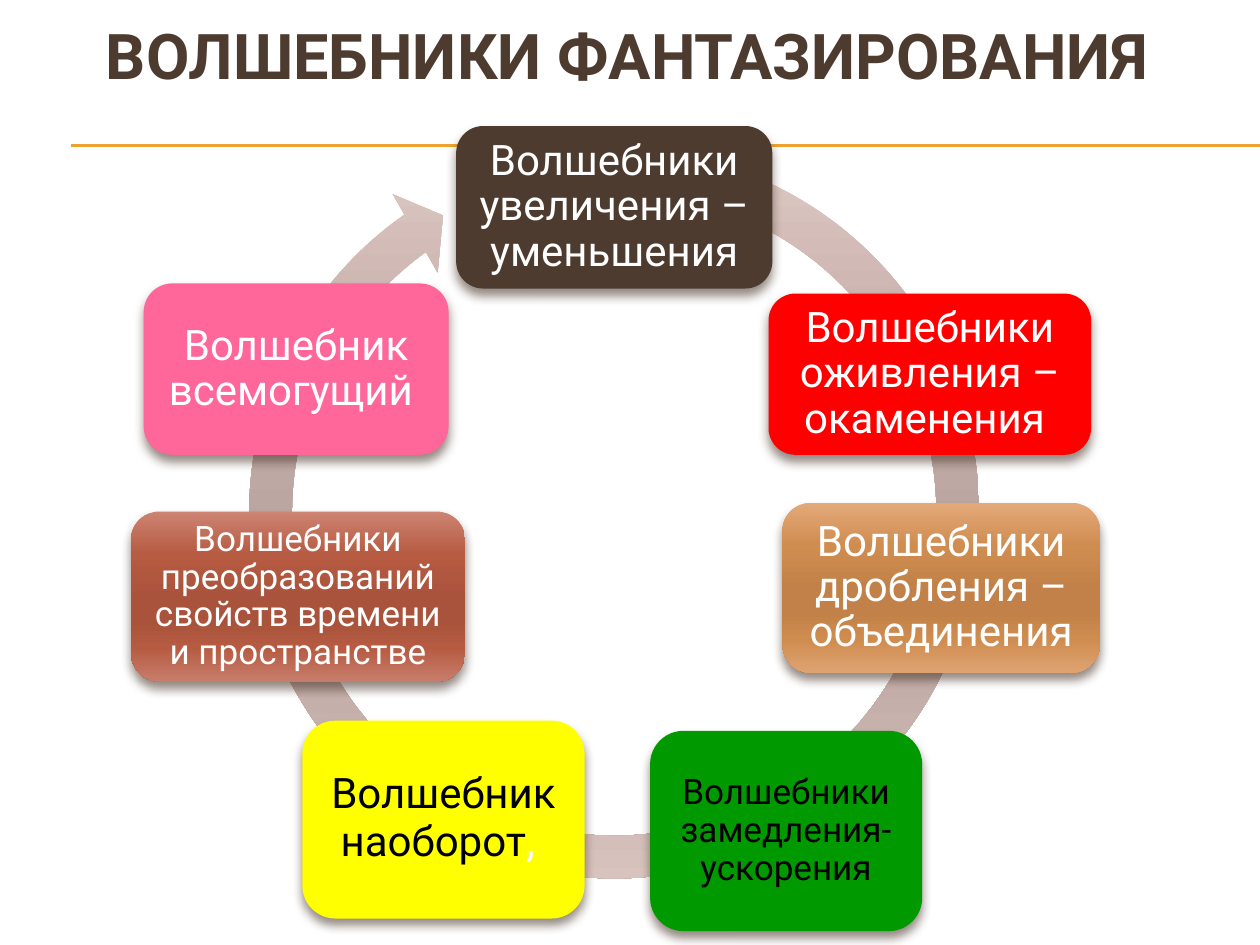
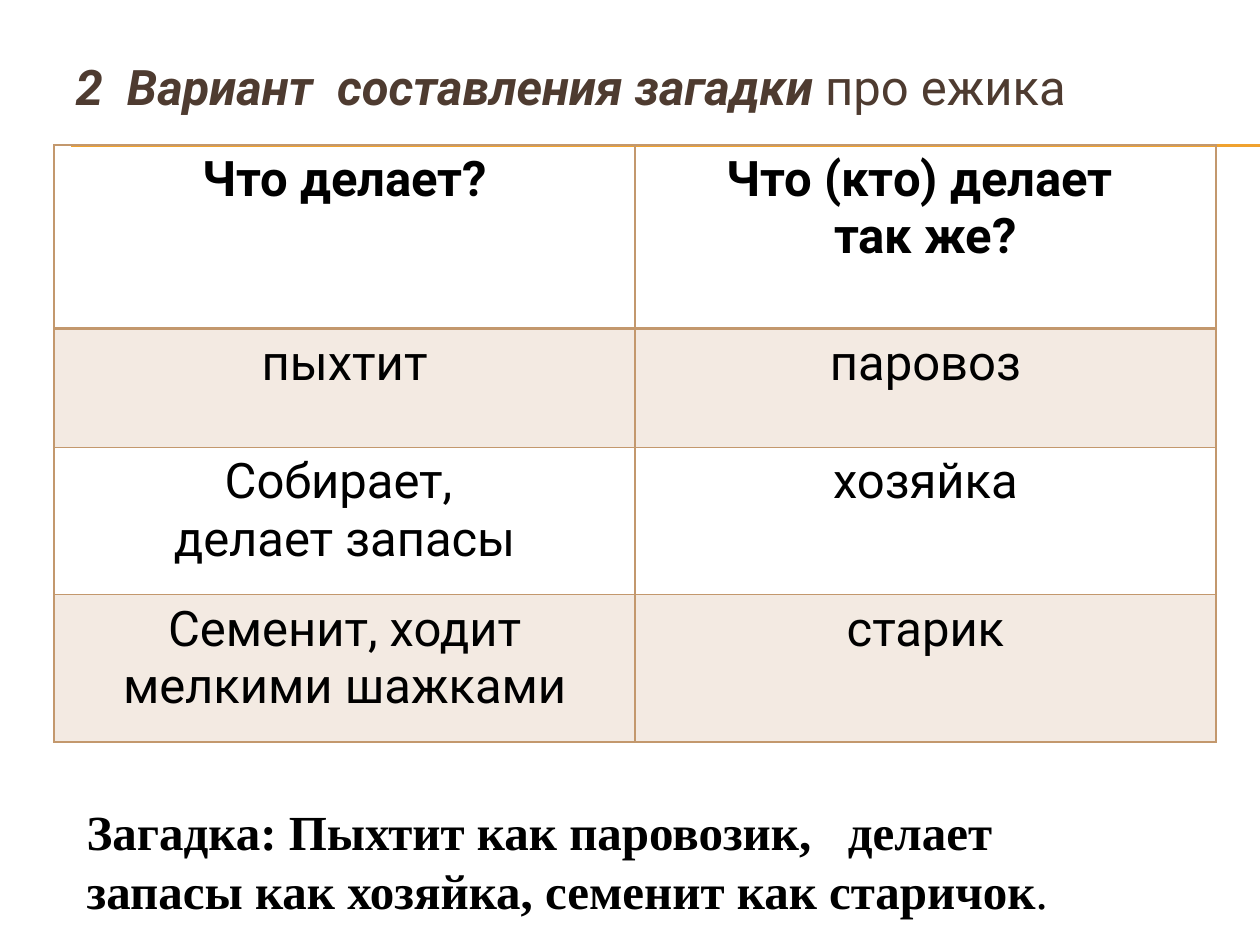
"""Build two slides on fantasy wizards and riddle making."""
from dataclasses import dataclass
from typing import Optional, Sequence, Union

from lxml.etree import SubElement
from pptx import Presentation
from pptx.dml.color import RGBColor
from pptx.enum.shapes import MSO_CONNECTOR as Connector, MSO_SHAPE as Preset
from pptx.enum.text import MSO_ANCHOR as Anchor, MSO_AUTO_SIZE as AutoSize, PP_ALIGN as Align
from pptx.oxml.ns import qn
from pptx.util import Inches, Pt

Fill = Union[str, Sequence[str]]


@dataclass(frozen=True)
class Theme:
    font: str = "Roboto"
    riddle_font: str = "Times New Roman"
    title_size: int = 36
    large: int = 28
    comma: int = 26
    medium: int = 24
    small: int = 20
    brown: str = "4E3B30"
    black: str = "000000"
    white: str = "FFFFFF"
    rule: str = "F0A22E"
    grid: str = "C3986D"
    band: str = "F3EAE2"
    red: str = "FF0000"
    green: str = "009900"
    yellow: str = "FFFF00"
    pink: str = "FF6699"
    ring: Sequence[str] = ("E0CBC7", "CBB4AF", "BBA6A1", "BBA6A1", "C9B3AE", "DAC5C1")
    caramel: Sequence[str] = ("E4A97A", "D08D50", "C18148", "C18148", "CF8C4F", "DEA372")
    brick: Sequence[str] = ("CD8473", "B75B42", "AA533C", "AA533C", "B65B42", "C77D6B")
    gradient_stops: Sequence[int] = (0, 25, 50, 65, 80, 100)


THEME = Theme()


@dataclass(frozen=True)
class Run:
    text: str
    size: Optional[int] = None
    color: Optional[str] = None
    bold: Optional[bool] = None
    italic: Optional[bool] = None


@dataclass(frozen=True)
class Box:
    left: float
    top: float
    width: float
    height: float

    def lengths(self) -> list:
        return [Inches(n) for n in (self.left, self.top, self.width, self.height)]


@dataclass(frozen=True)
class Wizard:
    box: Box
    fill: Fill
    runs: Sequence[Run]
    size: int = THEME.medium
    color: str = THEME.white
    inset: float = 0.1


WIZARDS = (
    Wizard(Box(3.62, 1, 2.51, 1.29), THEME.brown, [Run("Волшебники увеличения – уменьшения")]),
    Wizard(Box(6.1, 2.33, 2.56, 1.28), THEME.red, [Run("Волшебники оживления – окаменения ")]),
    Wizard(Box(6.21, 3.99, 2.52, 1.35), THEME.caramel, [Run("Волшебники дробления – объединения")]),
    Wizard(Box(5.16, 5.8, 2.16, 1.59), THEME.green, [Run("Волшебники замедления- ускорения")],
           THEME.small, THEME.black, 0.08),
    Wizard(Box(2.4, 5.72, 2.24, 1.57), THEME.yellow,
           [Run("Волшебник наоборот"), Run(", ", THEME.comma, THEME.white)], color=THEME.black),
    Wizard(Box(1.04, 4.06, 2.65, 1.35), THEME.brick,
           [Run("Волшебники преобразований свойств времени и пространстве")],
           THEME.small, inset=0.08),
    Wizard(Box(1.14, 2.25, 2.42, 1.36), THEME.pink, [Run("Волшебник всемогущий ")]),
)

RING_ADJUSTMENTS = (0.055, 3.307, 140.764, 172.057, 0.058)
RULE_HEIGHTS = (1.15, 1.16)
COMPARISONS = (
    (["Что делает?"], ["Что (кто) делает ", "так же?"]),
    (["пыхтит"], ["паровоз"]),
    (["Собирает, ", "делает запасы"], ["хозяйка"]),
    (["Семенит, ходит мелкими шажками"], ["старик"]),
)
ROW_HEIGHTS = (1.46, 0.94, 1.17, 1.17)


def write(frame, paragraphs: Sequence[Sequence[Run]], *, size: int, color: str,
          font: str = THEME.font, bold: bool = False, italic: bool = False,
          align=Align.LEFT, spacing: float = 1.0) -> None:
    """Fill a text frame with formatted paragraphs."""
    for index, pieces in enumerate(paragraphs):
        paragraph = frame.paragraphs[0] if index == 0 else frame.add_paragraph()
        paragraph.alignment = align
        paragraph.line_spacing = spacing
        for piece in pieces:
            run = paragraph.add_run()
            run.text = piece.text
            run.font.name = font
            run.font.size = Pt(piece.size or size)
            run.font.color.rgb = RGBColor.from_string(piece.color or color)
            run.font.bold = bold if piece.bold is None else piece.bold
            run.font.italic = italic if piece.italic is None else piece.italic


def prepare(frame, inset: Optional[float] = None) -> None:
    """Make a text frame wrap, stay fixed in size and centre vertically."""
    frame.word_wrap = True
    frame.auto_size = AutoSize.NONE
    frame.vertical_anchor = Anchor.MIDDLE
    if inset is not None:
        frame.margin_left = frame.margin_right = Inches(inset)
        frame.margin_top = frame.margin_bottom = Inches(inset)


def add_color(parent, color: str):
    """Append a plain colour element."""
    return SubElement(parent, qn("a:srgbClr"), val=color)


def paint(shape, fill: Fill) -> None:
    """Give a shape a solid or vertical gradient fill without outline."""
    shape.shadow.inherit = False
    shape.line.fill.background()
    if isinstance(fill, str):
        shape.fill.solid()
        shape.fill.fore_color.rgb = RGBColor.from_string(fill)
        return
    shape.fill.gradient()
    shape.fill.gradient_angle = 270
    stops = shape.element.spPr.find(".//" + qn("a:gsLst"))
    for stop in list(stops):
        stops.remove(stop)
    for position, color in zip(THEME.gradient_stops, fill):
        add_color(SubElement(stops, qn("a:gs"), pos=str(position * 1000)), color)


def cast_shadow(shape) -> None:
    """Add a soft brown shadow below a shape."""
    effects = shape.element.spPr.find(qn("a:effectLst"))
    shadow = SubElement(effects, qn("a:outerShdw"), blurRad=str(Pt(6)), dist=str(Pt(4)),
                        dir="5400000", algn="ctr", rotWithShape="0")
    SubElement(add_color(shadow, THEME.brown), qn("a:alpha"), val="60000")


def start_slide(deck, box: Box, title_runs: Sequence[Run], **text_format):
    """Add a slide with the shared double rule and a formatted title."""
    slide = deck.slides.add_slide(deck.slide_layouts[5])
    title = slide.shapes.title
    title.left, title.top, title.width, title.height = box.lengths()
    prepare(title.text_frame)
    write(title.text_frame, [title_runs], color=THEME.brown, bold=True, **text_format)
    for height in RULE_HEIGHTS:
        rule = slide.shapes.add_connector(
            Connector.STRAIGHT, Inches(0.56), Inches(height), Inches(10), Inches(height))
        rule.line.color.rgb = RGBColor.from_string(THEME.rule)
        rule.line.width = Pt(0.75)
        SubElement(rule.element.spPr, qn("a:effectLst"))
    return slide


def add_wizard(slide, wizard: Wizard) -> None:
    """Draw one wizard card."""
    card = slide.shapes.add_shape(Preset.ROUNDED_RECTANGLE, *wizard.box.lengths())
    paint(card, wizard.fill)
    cast_shadow(card)
    prepare(card.text_frame, wizard.inset)
    write(card.text_frame, [wizard.runs], size=wizard.size, color=wizard.color,
          align=Align.CENTER, spacing=0.9)


def add_border(cell, side: str, width: float) -> None:
    """Draw one side of a table cell."""
    edge = SubElement(cell._tc.get_or_add_tcPr(), qn(f"a:{side}"), w=str(Pt(width)))
    add_color(SubElement(edge, qn("a:solidFill")), THEME.grid)


def add_comparisons(slide) -> None:
    """Draw the comparison table."""
    box = Box(0.43, 1.15, 9.22, sum(ROW_HEIGHTS))
    table = slide.shapes.add_table(len(COMPARISONS), 2, *box.lengths()).table
    table.first_row = table.horz_banding = False
    for column in table.columns:
        column.width = Inches(box.width / 2)
    for row, (answers, height) in enumerate(zip(COMPARISONS, ROW_HEIGHTS)):
        table.rows[row].height = Inches(height)
        for column, lines in enumerate(answers):
            cell = table.cell(row, column)
            write(cell.text_frame, [[Run(line)] for line in lines], size=THEME.large,
                  color=THEME.black, bold=row == 0, align=Align.CENTER)
            for side in ("lnL", "lnR", "lnT", "lnB"):
                under_header = (row, side) in ((0, "lnB"), (1, "lnT"))
                add_border(cell, side, 2 if under_header else 1)
            if row % 2:
                cell.fill.solid()
                cell.fill.fore_color.rgb = RGBColor.from_string(THEME.band)
            else:
                cell.fill.background()


def build_wizards(deck) -> None:
    """Build the ring of wizards."""
    slide = start_slide(deck, Box(0.28, -0.04, 9.4, 0.94), [Run("ВОЛШЕБНИКИ ФАНТАЗИРОВАНИЯ")],
                        size=THEME.title_size, align=Align.CENTER)
    ring = slide.shapes.add_shape(Preset.CIRCULAR_ARROW, *Box(1.79, 0.99, 6.17, 6.17).lengths())
    for index, value in enumerate(RING_ADJUSTMENTS):
        ring.adjustments[index] = value
    paint(ring, THEME.ring)
    for wizard in WIZARDS:
        add_wizard(slide, wizard)


def build_riddle(deck) -> None:
    """Build the hedgehog riddle slide."""
    heading = [Run("2  Вариант  составления загадки "), Run("про ежика", bold=False, italic=False)]
    slide = start_slide(deck, Box(0.5, 0.36, 9.3, 0.65), heading, size=THEME.large, italic=True)
    add_comparisons(slide)
    riddle = slide.shapes.add_textbox(*Box(0.59, 6.31, 8.66, 1.04).lengths())
    prepare(riddle.text_frame)
    lines = [Run("Загадка: Пыхтит как паровозик,   делает запасы как хозяйка, "
                 "семенит как старичок"), Run(".", bold=False)]
    write(riddle.text_frame, [lines], size=THEME.large, color=THEME.black,
          font=THEME.riddle_font, bold=True)


def main() -> None:
    """Build and save the presentation."""
    deck = Presentation()
    deck.slide_width, deck.slide_height = Inches(10), Inches(7.5)
    build_wizards(deck)
    build_riddle(deck)
    deck.save("out.pptx")


if __name__ == "__main__":
    main()
